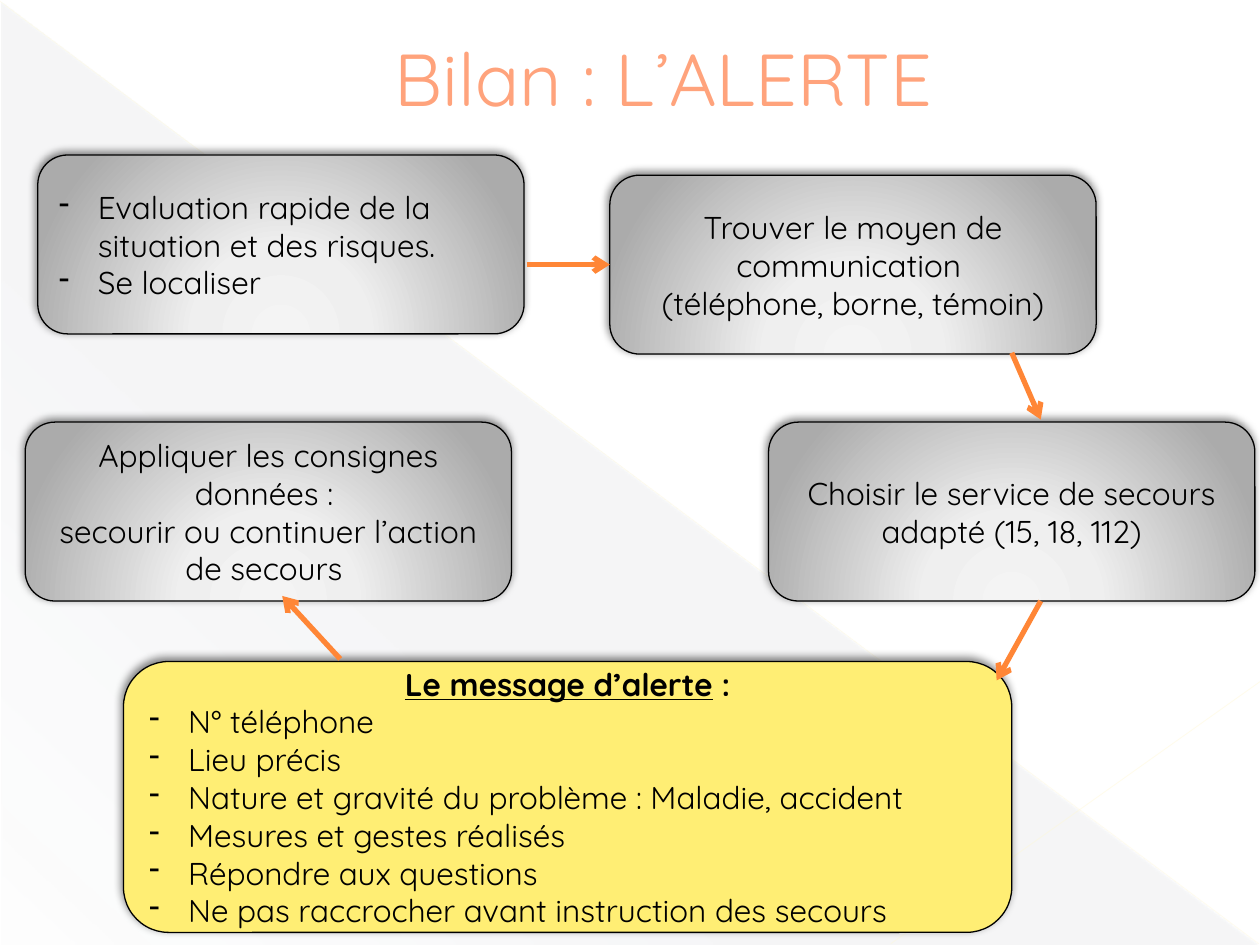
import dataclasses

import lxml.etree
import pptx
import pptx.dml.color
import pptx.enum.shapes
import pptx.enum.text
import pptx.oxml
import pptx.oxml.ns
import pptx.util

Inches = pptx.util.Inches
Pt = pptx.util.Pt
qn = pptx.oxml.ns.qn
SHAPE = pptx.enum.shapes.MSO_SHAPE
CENTER = pptx.enum.text.PP_ALIGN.CENTER


@dataclasses.dataclass(frozen=True)
class Theme:
    font: str = "Quicksand"
    title_size: int = 42
    body_size: int = 18
    title: str = "FFA37C"
    ink: str = "000000"
    arrow: str = "FF8636"
    message: str = "FFEE74"
    veil: str = "969DAB"
    falling_ray: str = "FFF8D1"
    rising_ray: str = "FFF9D5"
    metal_stops: tuple = ((0, "F4F4F4", 100), (34, "EFEFEF", 100), (100, "ABABAB", 100))
    metal_path: str = '<a:path path="circle"><a:fillToRect l="50000" t="155000" r="50000" b="-55000"/></a:path>'
    veil_path: str = '<a:lin ang="7980000" scaled="0"/>'


def color(value):
    return pptx.dml.color.RGBColor.from_string(value)


class SlideBuilder:
    def __init__(self, slide, theme):
        self.slide = slide
        self.theme = theme

    def gradient(self, shape, stops, direction):
        shape.fill.background()
        properties = shape._element.spPr
        marks = "".join(
            f'<a:gs pos="{position * 1000}"><a:srgbClr val="{tone}">'
            f'<a:alpha val="{opacity * 1000}"/></a:srgbClr></a:gs>'
            for position, tone, opacity in stops
        )
        fill = pptx.oxml.parse_xml(
            f'<a:gradFill {pptx.oxml.ns.nsdecls("a")} rotWithShape="1">'
            f"<a:gsLst>{marks}</a:gsLst>{direction}</a:gradFill>"
        )
        properties.replace(properties.find(qn("a:noFill")), fill)

    def shadow(self, shape):
        effects = shape._element.spPr.find(qn("a:effectLst"))
        effects.append(pptx.oxml.parse_xml(
            f'<a:outerShdw {pptx.oxml.ns.nsdecls("a")} blurRad="{Pt(5)}" dist="{Pt(2)}" '
            f'dir="{245 * 60000}" algn="ctr" rotWithShape="0"><a:srgbClr val="{self.theme.ink}">'
            '<a:alpha val="50000"/></a:srgbClr></a:outerShdw>'
        ))

    def veil(self, left, top, width, height):
        triangle = self.slide.shapes.add_shape(
            SHAPE.RIGHT_TRIANGLE, Inches(left), Inches(top), Inches(width), Inches(height))
        triangle.shadow.inherit = False
        triangle.line.fill.background()
        stops = [(position, self.theme.veil, opacity)
                 for position, opacity in ((0, 10), (70, 8), (100, 1))]
        self.gradient(triangle, stops, self.theme.veil_path)

    def line(self, start, end, tone, width, opacity=100):
        connector = self.slide.shapes.add_connector(
            pptx.enum.shapes.MSO_CONNECTOR.STRAIGHT, *map(Inches, start + end))
        connector.line.color.rgb = color(tone)
        connector.line.width = Pt(width)
        properties = connector._element.spPr
        lxml.etree.SubElement(properties, qn("a:effectLst"))
        if opacity < 100:
            tint = next(properties.iter(qn("a:srgbClr")))
            lxml.etree.SubElement(tint, qn("a:alpha"), val=str(opacity * 1000))
        return connector

    def arrow(self, start, end):
        connector = self.line(start, end, self.theme.arrow, 3)
        lxml.etree.SubElement(connector.line._ln, qn("a:tailEnd"), type="arrow")
        return connector

    def style(self, paragraph, size, tone):
        paragraph.font.name = self.theme.font
        paragraph.font.size = Pt(size)
        paragraph.font.color.rgb = color(tone)

    def title(self, text):
        box = self.slide.shapes.add_textbox(0, 0, Inches(10), Inches(1.23))
        frame = box.text_frame
        frame.word_wrap = True
        frame.vertical_anchor = pptx.enum.text.MSO_ANCHOR.MIDDLE
        heading = frame.paragraphs[0]
        heading.text = text
        heading.alignment = CENTER
        heading._p.get_or_add_pPr().set("marL", str(Inches(0.53)))
        self.style(heading, self.theme.title_size, self.theme.title)

    def step(self, left, top, lines=(), bullets=(), width=3.86, height=1.42, fill=None):
        box = self.slide.shapes.add_shape(
            SHAPE.ROUNDED_RECTANGLE, Inches(left), Inches(top), Inches(width), Inches(height))
        box.shadow.inherit = False
        if fill:
            box.fill.solid()
            box.fill.fore_color.rgb = color(fill)
        else:
            self.gradient(box, self.theme.metal_stops, self.theme.metal_path)
        box.line.color.rgb = color(self.theme.ink)
        box.line.width = Pt(0.75)
        self.shadow(box)
        frame = box.text_frame
        frame.word_wrap = True
        frame.vertical_anchor = pptx.enum.text.MSO_ANCHOR.MIDDLE
        for index, text in enumerate([*lines, *bullets]):
            paragraph = frame.add_paragraph() if index else frame.paragraphs[0]
            paragraph.text = text
            self.style(paragraph, self.theme.body_size, self.theme.ink)
            if index < len(lines):
                paragraph.alignment = CENTER
            else:
                self.bullet(paragraph)
        return box

    def bullet(self, paragraph):
        paragraph.alignment = pptx.enum.text.PP_ALIGN.LEFT
        properties = paragraph._p.get_or_add_pPr()
        properties.set("marL", str(Inches(0.31)))
        properties.set("indent", str(-Inches(0.31)))
        mark = lxml.etree.Element(qn("a:buChar"), char="-")
        properties.insert(0, mark)


def main():
    presentation = pptx.Presentation()
    presentation.slide_width = Inches(10)
    presentation.slide_height = Inches(7.5)
    theme = Theme()
    alert = SlideBuilder(presentation.slides.add_slide(presentation.slide_layouts[6]), theme)

    alert.veil(0.01, 0.02, 9.98, 7.48)
    alert.line((0, 0.01), (9.99, 7.49), theme.falling_ray, 0.39, 35)
    alert.line((10, 5.41), (7.07, 7.49), theme.rising_ray, 0.47, 45)

    alert.step(0.3, 1.23, bullets=[
        "Evaluation rapide de la situation et des risques.",
        "Se localiser",
    ])
    message = alert.step(0.98, 5.25, width=7.05, height=2.15, fill=theme.message, lines=[""], bullets=[
        "N° téléphone",
        "Lieu précis",
        "Nature et gravité du problème : Maladie, accident",
        "Mesures et gestes réalisés",
        "Répondre aux questions",
        "Ne pas raccrocher avant instruction des secours",
    ])
    heading = message.text_frame.paragraphs[0]
    heading.font.bold = True
    for text, underlined in (("Le message d’alerte", True), (" :", False)):
        run = heading.add_run()
        run.text = text
        run.font.underline = underlined

    alert.step(6.1, 3.35, ["Choisir le service de secours adapté (15, 18, 112)"])
    contact = alert.step(4.84, 1.39, [
        "Trouver le moyen de communication ",
        "(téléphone, borne, témoin)",
    ])
    alert.title("Bilan : L’ALERTE")

    alert.arrow((4.18, 2.1), (4.84, 2.1)).end_connect(contact, 1)
    alert.arrow((8.03, 2.8), (8.26, 3.33))
    alert.arrow((8.26, 4.77), (7.91, 5.4))
    alert.step(0.2, 3.35, [
        "Appliquer les consignes données : ",
        "secourir ou continuer l’action de secours ",
    ])
    alert.arrow((2.7, 5.23), (2.24, 4.73))

    presentation.save("out.pptx")


if __name__ == "__main__":
    main()
